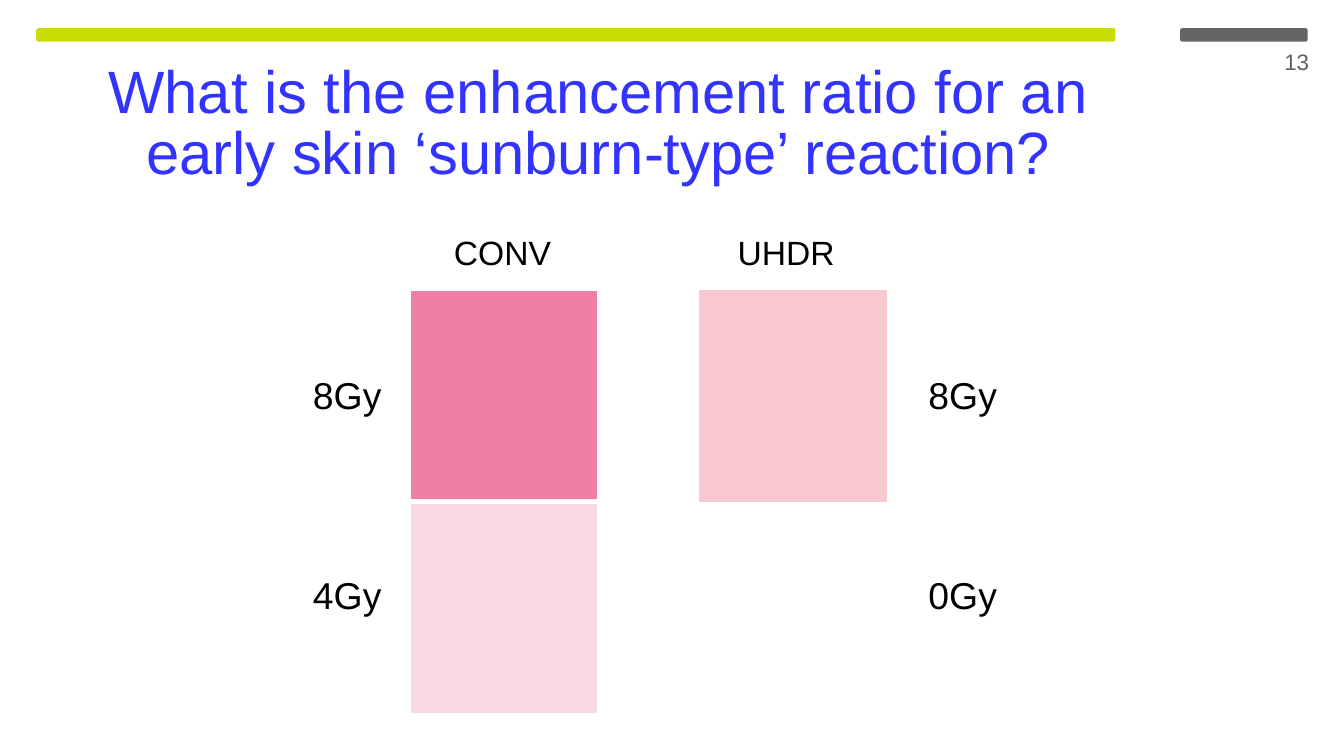
"""Build the slide on the enhancement ratio for an early skin reaction."""
from lxml.etree import SubElement
from pptx import Presentation
from pptx.dml.color import RGBColor
from pptx.enum.shapes import MSO_SHAPE
from pptx.enum.text import MSO_AUTO_SIZE, PP_ALIGN
from pptx.oxml.ns import qn
from pptx.util import Inches, Pt

COLORS = {
    "lime": "C9DD03",
    "gray": "616365",
    "blue": "3333FF",
    "black": "000000",
    "white": "FFFFFF",
    "strong pink": "EE7EA6",
    "pale pink": "F8D8E1",
    "soft pink": "F7C8CF",
}
PLAIN_TABLE_STYLE = "{2D5ABB26-0587-4C30-8999-92F81FD0307C}"

presentation = Presentation()
presentation.slide_width = Inches(10)
presentation.slide_height = Inches(10 * 9 / 16)
slide = presentation.slides.add_slide(presentation.slide_layouts[6])


def add_text(text, left, top, width, height, size=20, color="black",
             align=PP_ALIGN.LEFT, wrap=False, spacing=None):
    box = slide.shapes.add_textbox(Inches(left), Inches(top), Inches(width), Inches(height))
    frame = box.text_frame
    frame.word_wrap = wrap
    frame.auto_size = MSO_AUTO_SIZE.NONE if wrap else MSO_AUTO_SIZE.SHAPE_TO_FIT_TEXT
    paragraph = frame.paragraphs[0]
    paragraph.alignment = align
    paragraph.line_spacing = spacing
    run = paragraph.add_run()
    run.text = text
    run.font.name = "Arial"
    run.font.size = Pt(size)
    run.font.color.rgb = RGBColor.from_string(COLORS[color])


def add_borders(cell, widths, color="white"):
    properties = cell._tc.get_or_add_tcPr()
    for index, (side, width) in enumerate(zip(["lnL", "lnR", "lnT", "lnB"], widths)):
        line = SubElement(properties, qn(f"a:{side}"), w=str(Pt(width)))
        fill = SubElement(line, qn("a:solidFill"))
        SubElement(fill, qn("a:srgbClr"), val=COLORS[color])
        properties.insert(index, line)


for left, width, color in [(0.27, 8.03, "lime"), (8.78, 0.95, "gray")]:
    bar = slide.shapes.add_shape(
        MSO_SHAPE.ROUNDED_RECTANGLE, Inches(left), Inches(0.21), Inches(width), Inches(0.1))
    bar.shadow.inherit = False
    bar.fill.solid()
    bar.fill.fore_color.rgb = RGBColor.from_string(COLORS[color])
    bar.line.fill.background()

add_text("What is the enhancement ratio for an early skin ‘sunburn-type’ reaction?",
         0.53, 0.43, 7.85, 1.04, size=32, color="blue", align=PP_ALIGN.CENTER,
         wrap=True, spacing=0.85)
add_text("13", 8.78, 0.31, 1.06, 0.27, size=12, color="gray",
         align=PP_ALIGN.RIGHT, wrap=True)

for heading, left in [("CONV", 3.28), ("UHDR", 5.39)]:
    add_text(heading, left, 1.68, 0.93, 0.4, size=18)

for left, doses in [(2.23, ["8Gy", "4Gy"]), (6.81, ["8Gy", "0Gy"])]:
    for dose, top in zip(doses, [2.72, 4.21]):
        add_text(dose, left, top, 0.72, 0.44)

for left, fills, borders in [
    (5.2, ["soft pink", "white"], None),
    (3.05, ["strong pink", "pale pink"], [(1, 1, 1, 3), (1, 1, 3, 1)]),
]:
    frame = slide.shapes.add_table(2, 1, Inches(left), Inches(2.16), Inches(1.4), Inches(3.15))
    table = frame.table
    table._tbl.tblPr[0].text = PLAIN_TABLE_STYLE
    for row, fill in enumerate(fills):
        cell = table.cell(row, 0)
        cell.fill.solid()
        cell.fill.fore_color.rgb = RGBColor.from_string(COLORS[fill])
        if borders:
            add_borders(cell, borders[row])

presentation.save("out.pptx")
